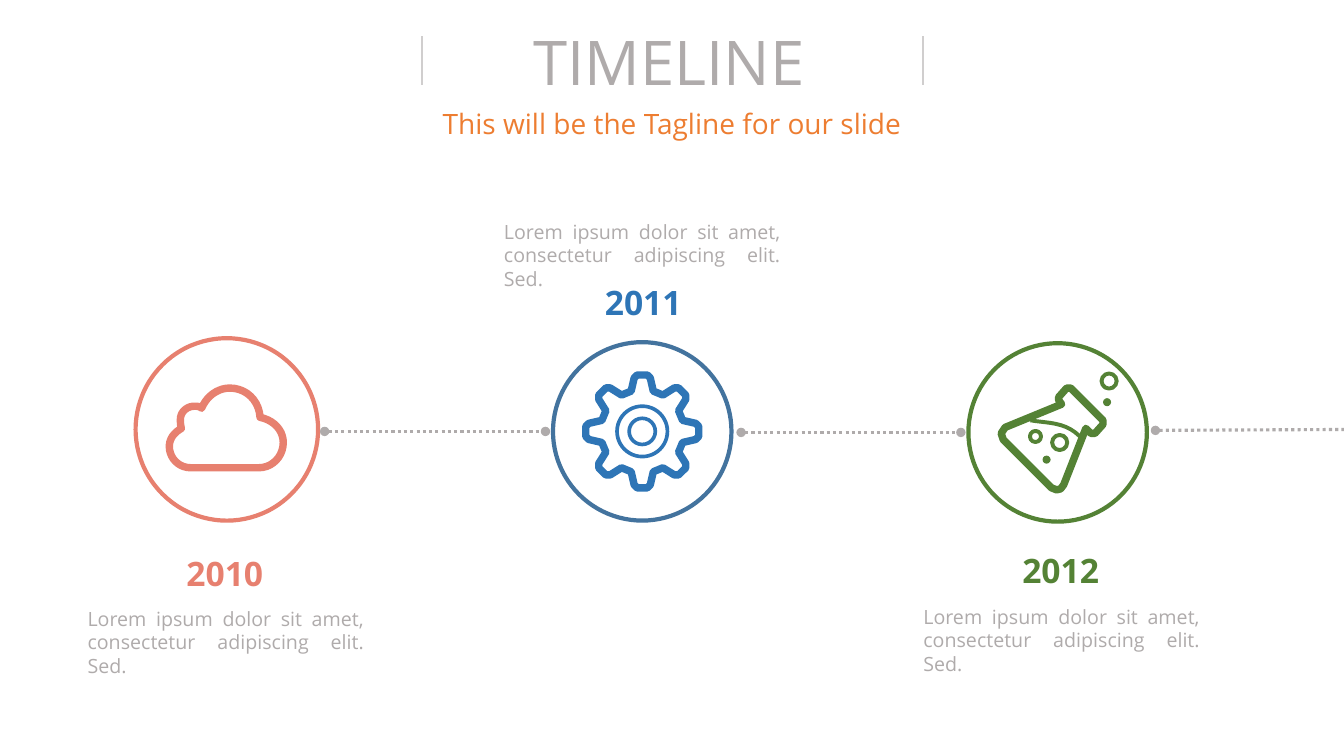
import math
from dataclasses import dataclass

from lxml import etree
from pptx import Presentation
from pptx.dml.color import RGBColor
from pptx.enum import dml, shapes, text
from pptx.oxml import ns
from pptx.util import Inches, Pt


@dataclass(frozen=True)
class Theme:
    font: str = "Open Sans"
    gray: str = "AFABAB"
    rule: str = "D0CECE"
    tagline: str = "ED7D31"
    white: str = "FFFFFF"
    coral: str = "E7806F"
    blue: str = "2E75B6"
    blue_ring: str = "43739E"
    green: str = "548235"
    title_size: int = 44
    year_size: int = 24
    tagline_size: int = 20
    body_size: int = 14
    icon_weight: float = 5.3


THEME = Theme()
BODY = "Lorem ipsum dolor sit amet, consectetur adipiscing elit. Sed."


def rgb(color):
    return RGBColor.from_string(color)


def add_text(slide, box, words, size, color, bold=False, align=text.PP_ALIGN.CENTER):
    shape = slide.shapes.add_textbox(*map(Inches, box))
    frame = shape.text_frame
    frame.word_wrap = True
    frame.auto_size = text.MSO_AUTO_SIZE.SHAPE_TO_FIT_TEXT
    frame.text = words
    paragraph = frame.paragraphs[0]
    paragraph.alignment = align
    font = paragraph.runs[0].font
    font.name, font.size, font.bold = THEME.font, Pt(size), bold
    font.color.rgb = rgb(color)


def add_line(slide, start, end, color, weight, dotted=False):
    line = slide.shapes.add_connector(
        shapes.MSO_CONNECTOR.STRAIGHT, *map(Inches, (*start, *end)))
    line.line.color.rgb = rgb(color)
    line.line.width = Pt(weight)
    if dotted:
        line.line.dash_style = dml.MSO_LINE.ROUND_DOT
        outline = line.line._get_or_add_ln()
        for end_name in ("a:headEnd", "a:tailEnd"):
            etree.SubElement(outline, ns.qn(end_name), type="oval")
    etree.SubElement(line._element.spPr, ns.qn("a:effectLst"))


def paint(shape, fill, color, weight):
    shape.shadow.inherit = False
    if fill:
        shape.fill.solid()
        shape.fill.fore_color.rgb = rgb(fill)
    else:
        shape.fill.background()
    if weight:
        shape.line.color.rgb = rgb(color)
        shape.line.width = Pt(weight)
    else:
        shape.line.fill.background()


def add_circle(slide, center, diameter, color, weight=0, fill=None):
    left, top = (value - diameter / 2 for value in center)
    shape = slide.shapes.add_shape(
        shapes.MSO_SHAPE.OVAL, *map(Inches, (left, top, diameter, diameter)))
    paint(shape, fill, color, weight)


def add_outline(slide, points, color, weight, close=True):
    emu = [(Inches(x), Inches(y)) for x, y in points]
    builder = slide.shapes.build_freeform(*emu[0], scale=1.0)
    builder.add_line_segments(emu[1:], close=close)
    shape = builder.convert_to_shape()
    paint(shape, None, color, weight)
    etree.SubElement(shape.line._get_or_add_ln(), ns.qn("a:round"))


def curve_points(start, curves, steps=10):
    points = [start]
    for first, second, end in curves:
        begin = points[-1]
        for step in range(1, steps + 1):
            t = step / steps
            weights = ((1 - t) ** 3, 3 * t * (1 - t) ** 2, 3 * t * t * (1 - t), t ** 3)
            points.append(tuple(
                sum(w * p[axis] for w, p in zip(weights, (begin, first, second, end)))
                for axis in (0, 1)))
    return points


def add_cloud(slide):
    points = curve_points((1.89, 4.64), [
        ((1.77, 4.64), (1.68, 4.54), (1.68, 4.43)),
        ((1.68, 4.35), (1.73, 4.29), (1.8, 4.25)),
        ((1.79, 4.22), (1.79, 4.19), (1.79, 4.16)),
        ((1.79, 4.09), (1.85, 4.03), (1.93, 4.03)),
        ((1.95, 4.03), (1.98, 4.03), (2.0, 4.05)),
        ((2.05, 3.93), (2.16, 3.85), (2.28, 3.85)),
        ((2.44, 3.85), (2.57, 3.97), (2.58, 4.14)),
        ((2.72, 4.17), (2.81, 4.27), (2.81, 4.39)),
        ((2.81, 4.53), (2.7, 4.64), (2.57, 4.64)),
    ])
    add_outline(slide, points, THEME.coral, THEME.icon_weight)


def add_gear(slide):
    center = (6.37, 4.28)
    tooth = [(-0.11, -0.4), (-0.08, -0.53), (-0.05, -0.56),
             (0.05, -0.56), (0.08, -0.53), (0.11, -0.4)]
    points = []
    for index in range(8):
        cosine, sine = (f(index * math.pi / 4) for f in (math.cos, math.sin))
        points += [(center[0] + x * cosine - y * sine,
                    center[1] + x * sine + y * cosine) for x, y in tooth]
    add_outline(slide, points, THEME.blue, THEME.icon_weight)
    for diameter in (0.5, 0.26):
        add_circle(slide, center, diameter, THEME.blue, 2.6)


def add_flask(slide):
    glass = [(10.5, 3.94), (10.58, 3.85), (10.62, 3.85), (10.94, 4.17), (10.94, 4.21),
             (10.86, 4.3), (10.82, 4.3), (10.77, 4.25), (10.55, 4.81), (10.52, 4.85),
             (10.48, 4.86), (10.43, 4.84), (9.95, 4.36), (9.93, 4.3), (9.97, 4.24),
             (10.53, 4.01), (10.5, 3.97)]
    add_outline(slide, glass, THEME.green, THEME.icon_weight)
    surface = curve_points((10.22, 4.17), [((10.38, 4.2), (10.56, 4.18), (10.71, 4.33))])
    add_outline(slide, surface, THEME.green, 2.8, close=False)
    for center, diameter in (((10.51, 4.39), 0.15), ((11, 3.78), 0.15), ((10.27, 4.33), 0.11)):
        add_circle(slide, center, diameter, THEME.green, 2.8)
    for center in ((10.38, 4.56), (10.98, 3.99)):
        add_circle(slide, center, 0.08, THEME.green, fill=THEME.green)


def add_milestone(slide, year, color, year_at, body_at):
    add_text(slide, (*year_at, 1.48, 0.5), year, THEME.year_size, color, bold=True)
    add_text(slide, (*body_at, 2.94, 0.57), BODY, THEME.body_size, THEME.gray,
             align=text.PP_ALIGN.JUSTIFY)


def main():
    presentation = Presentation()
    presentation.slide_width = Inches(13.33)
    presentation.slide_height = Inches(7.5)
    slide = presentation.slides.add_slide(presentation.slide_layouts[6])

    add_text(slide, (3.36, 1.01, 6.61, 0.44), "This will be the Tagline for our slide",
             THEME.tagline_size, THEME.tagline)
    add_text(slide, (2.14, 0.19, 8.99, 0.84), "TIMELINE", THEME.title_size, THEME.gray)
    for x in (4.19, 9.15):
        add_line(slide, (x, 0.36), (x, 0.84), THEME.rule, 1.5)

    for center, diameter, color, add_icon in (
            ((10.49, 4.29), 1.77, THEME.green, add_flask),
            ((6.37, 4.28), 1.77, THEME.blue_ring, add_gear),
            ((2.25, 4.26), 1.81, THEME.coral, add_cloud)):
        add_circle(slide, center, diameter, color, 3, THEME.white)
        add_icon(slide)

    for start, end in (((3.22, 4.28), (5.41, 4.28)),
                       ((7.35, 4.29), (9.53, 4.29)),
                       ((11.46, 4.27), (13.46, 4.26))):
        add_line(slide, start, end, THEME.gray, 2.25, dotted=True)

    add_milestone(slide, "2010", THEME.coral, (1.49, 5.44), (0.77, 5.97))
    add_milestone(slide, "2011", THEME.blue, (5.64, 2.75), (4.9, 2.13))
    add_milestone(slide, "2012", THEME.green, (9.78, 5.41), (9.06, 5.95))
    presentation.save("out.pptx")


if __name__ == "__main__":
    main()
